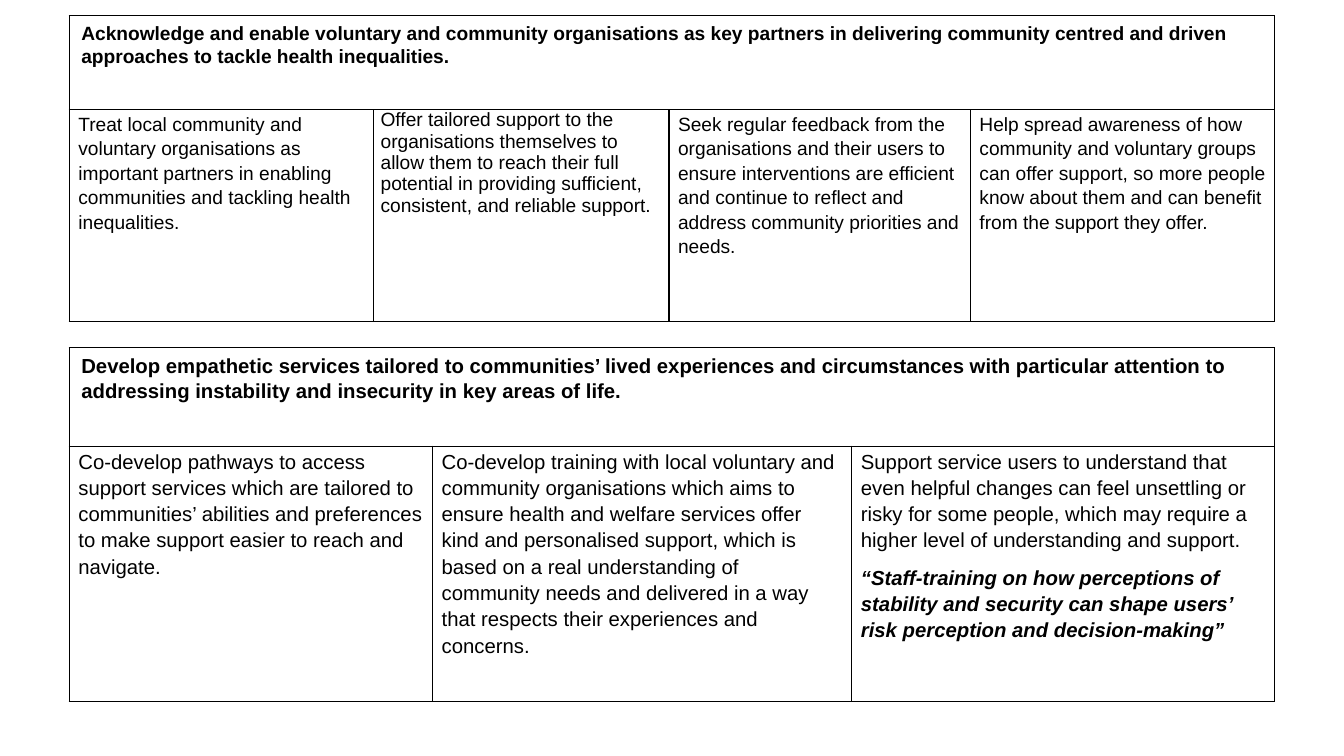
from lxml import etree
from pptx import Presentation
from pptx import util as u
from pptx.dml.color import RGBColor
from pptx.oxml.ns import qn

Pt = u.Pt
prs = Presentation()
prs.slide_width, prs.slide_height = Pt(960), Pt(540)
s = prs.slides.add_slide(prs.slide_layouts[6])


def rgb(value):
    return RGBColor.from_string(value)


def fill_cell(cell, paras, size, spacing, insets, bold=False):
    cell.margin_left = cell.margin_right = Pt(insets[0])
    cell.margin_top, cell.margin_bottom = Pt(insets[1]), Pt(insets[2])
    tf = cell.text_frame
    tf.text = "\n".join(paras)
    for p in tf.paragraphs:
        p.line_spacing, p.space_after = spacing, Pt(8)
        f = p.runs[0].font
        f.name, f.size, f.color.rgb = "Arial", Pt(size), rgb("000000")
        quote = p.text.startswith("“")
        f.bold, f.italic = bold or quote, quote


# Each recommendation: top, text size, column widths, row heights, heading, actions
recommendations = [
    (11.3, 13.7, [217.4, 211, 215.3, 217.3], [67, 151.2],
     "Acknowledge and enable voluntary and community organisations as key partners in "
     "delivering community centred and driven approaches to tackle health inequalities.",
     [["Treat local community and voluntary organisations as important partners in "
       "enabling communities and tackling health inequalities."],
      ["Offer tailored support to the organisations themselves to allow them to reach "
       "their full potential in providing sufficient, consistent, and reliable support."],
      ["Seek regular feedback from the organisations and their users to ensure "
       "interventions are efficient and continue to reflect and address community "
       "priorities and needs."],
      ["Help spread awareness of how community and voluntary groups can offer support, "
       "so more people know about them and can benefit from the support they offer."]]),
    (248.4, 14.5, [259.5, 299.5, 302], [70.4, 182.2],
     "Develop empathetic services tailored to communities’ lived experiences and "
     "circumstances with particular attention to addressing instability and insecurity "
     "in key areas of life.",
     [["Co-develop pathways to access support services which are tailored to "
       "communities’ abilities and preferences to make support easier to reach and "
       "navigate."],
      ["Co-develop training with local voluntary and community organisations which aims "
       "to ensure health and welfare services offer kind and personalised support, which "
       "is based on a real understanding of community needs and delivered in a way that "
       "respects their experiences and concerns."],
      ["Support service users to understand that even helpful changes can feel "
       "unsettling or risky for some people, which may require a higher level of "
       "understanding and support.",
       "“Staff-training on how perceptions of stability and security can shape users’ "
       "risk perception and decision-making”"]]),
]

for top, size, widths, heights, heading, actions in recommendations:
    # Table grid
    frame = s.shapes.add_table(2, len(widths), Pt(49.5), Pt(top),
                               Pt(sum(widths)), Pt(sum(heights)))
    tbl = frame.table
    tbl.first_row = tbl.horz_banding = False
    for col, width in zip(tbl.columns, widths):
        col.width = Pt(width)
    for row, height in zip(tbl.rows, heights):
        row.height = Pt(height)

    # Heading across all columns, one action per cell below
    tbl.cell(0, 0).merge(tbl.cell(0, len(widths) - 1))
    fill_cell(tbl.cell(0, 0), [heading], size, 1.07, (8.6, 4.3, 4.3), bold=True)
    for i, paras in enumerate(actions):
        tight = paras[0].startswith("Offer")
        fill_cell(tbl.cell(1, i), paras, size, 1.0 if tight else 1.15,
                  (5, 0, 0) if tight else (6.5, 0.7, 0))

    # Thin black borders, no fill
    for cell in tbl.iter_cells():
        cell.fill.background()
        tcPr = cell._tc.get_or_add_tcPr()
        for i, side in enumerate(("lnL", "lnR", "lnT", "lnB")):
            ln = etree.Element(qn("a:" + side), w=str(Pt(1)))
            solid = etree.SubElement(ln, qn("a:solidFill"))
            etree.SubElement(solid, qn("a:srgbClr"), val="000000")
            tcPr.insert(i, ln)

prs.save("out.pptx")
